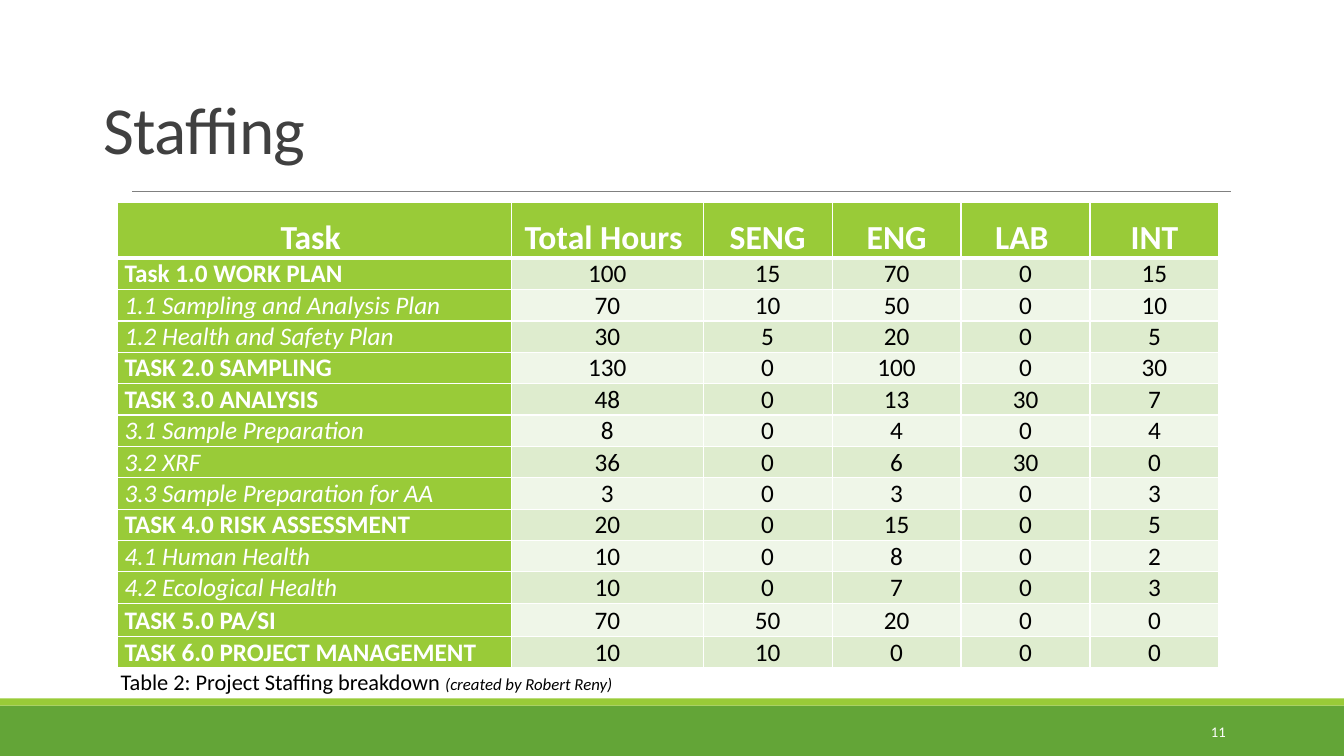
from lxml import etree
from pptx import Presentation
from pptx.dml.color import RGBColor
from pptx.enum.shapes import MSO_CONNECTOR, MSO_SHAPE
from pptx.enum.text import MSO_ANCHOR, PP_ALIGN
from pptx.oxml.ns import qn
from pptx.util import Cm, Pt

TOP, MIDDLE, BOTTOM = MSO_ANCHOR.TOP, MSO_ANCHOR.MIDDLE, MSO_ANCHOR.BOTTOM
LEFT, CENTER, RIGHT = PP_ALIGN.LEFT, PP_ALIGN.CENTER, PP_ALIGN.RIGHT
RECT, STRAIGHT = MSO_SHAPE.RECTANGLE, MSO_CONNECTOR.STRAIGHT

# Content
TITLE = "Staffing"
CAPTION = ("Table 2: Project Staffing breakdown ", "(created by Robert Reny)")
PAGE = "11"
HEAD = ("Task ", "Total Hours ", "SENG", "ENG", "LAB ", "INT")
TASKS = [
    ("Task 1.0 WORK PLAN", 100, 15, 70, 0, 15),
    ("1.1 Sampling and Analysis Plan", 70, 10, 50, 0, 10),
    ("1.2 Health and Safety Plan", 30, 5, 20, 0, 5),
    ("TASK 2.0 SAMPLING", 130, 0, 100, 0, 30),
    ("TASK 3.0 ANALYSIS", 48, 0, 13, 30, 7),
    ("3.1 Sample Preparation", 8, 0, 4, 0, 4),
    ("3.2 XRF", 36, 0, 6, 30, 0),
    ("3.3 Sample Preparation for AA", 3, 0, 3, 0, 3),
    ("TASK 4.0 RISK ASSESSMENT", 20, 0, 15, 0, 5),
    ("4.1 Human Health", 10, 0, 8, 0, 2),
    ("4.2 Ecological Health", 10, 0, 7, 0, 3),
    ("TASK 5.0 PA/SI", 70, 50, 20, 0, 0),
    ("TASK 6.0 PROJECT MANAGEMENT", 10, 10, 0, 0, 0),
]

THEME = {
    "font": "Calibri",
    "dark": "63A537", "green": "99CB38", "rule": "808080",
    "bands": ("DEECCE", "EFF6E8"),
    "title": "404040", "ink": "000000", "white": "FFFFFF",
    "size": {"title": 48, "head": 24, "body": 18, "note": 16, "small": 12, "page": 10.5},
}
SIZE = THEME["size"]

# Layout in cm
WIDE, HIGH = 33.87, 19.05
BARS = [(17.78, 1.27, "dark"), (17.6, 0.18, "green")]
COLS = [9.93, 4.83] + [3.25] * 4
ROWS = [1.4] + [0.79] * 11 + [0.84, 0.79]


def color(name):
    return RGBColor.from_string(THEME.get(name, name))


def write(para, text, size, ink, **style):
    run = para.add_run()
    run.text = text
    format = {"name": THEME["font"], "size": Pt(SIZE[size]), "bold": False, "italic": False}
    for key, value in (format | style).items():
        setattr(run.font, key, value)
    run.font.color.rgb = color(ink)
    return run


def add_text(slide, box, anchor=TOP, align=LEFT):
    frame = slide.shapes.add_textbox(*map(Cm, box)).text_frame
    frame.word_wrap = True
    frame.vertical_anchor = anchor
    para = frame.paragraphs[0]
    para.alignment = align
    return para


def set_edge(cell, side, width):
    props = cell._tc.get_or_add_tcPr()
    line = etree.SubElement(props, qn("a:ln" + side), w=str(Pt(width)))
    fill = etree.SubElement(line, qn("a:solidFill"))
    etree.SubElement(fill, qn("a:srgbClr"), val=THEME["white"])


def fill_cell(cell, row, col, value):
    head, name = row == 0, col == 0
    format = {"margin_left": Cm(0.18), "margin_right": Cm(0.18),
              "margin_top": 0, "margin_bottom": 0, "vertical_anchor": BOTTOM}
    for key, item in format.items():
        setattr(cell, key, item)
    edges = {"L": 1, "R": 1, "T": 3 if row == 1 else 1, "B": 3 if head else 1}
    for side, width in edges.items():
        set_edge(cell, side, width)
    cell.fill.solid()
    cell.fill.fore_color.rgb = color("green" if head or name else THEME["bands"][(row - 1) % 2])
    para = cell.text_frame.paragraphs[0]
    para.alignment = LEFT if name and not head else CENTER
    main = ".0 " in str(value)
    write(para, str(value), "head" if head else "body",
          "white" if head or name else "ink",
          bold=head or main, italic=name and not head and not main)


def main():
    deck = Presentation()
    deck.slide_width, deck.slide_height = Cm(WIDE), Cm(HIGH)
    slide = deck.slides.add_slide(deck.slide_layouts[6])

    # Footer bars
    for top, height, shade in BARS:
        bar = slide.shapes.add_shape(RECT, 0, Cm(top), Cm(WIDE), Cm(height))
        bar.shadow.inherit = False
        bar.fill.solid()
        bar.fill.fore_color.rgb = color(shade)
        bar.line.fill.background()

    # Rule under the title
    rule = slide.shapes.add_connector(STRAIGHT, Cm(3.33), Cm(4.82), Cm(31.01), Cm(4.82))
    rule.line.color.rgb = color("rule")
    rule.line.width = Pt(0.5)
    etree.SubElement(rule._element.spPr, qn("a:effectLst"))

    # Title, caption and page number
    para = add_text(slide, (2.36, 0.86, 28.78, 3.5), BOTTOM)
    para.line_spacing = 0.85
    run = write(para, TITLE, "title", "title")
    run.font._element.set("spc", "-50")

    para = add_text(slide, (2.79, 16.71, 17.88, 0.94))
    write(para, CAPTION[0], "note", "ink")
    write(para, CAPTION[1], "small", "ink", italic=True)

    para = add_text(slide, (27.51, 17.93, 3.63, 1.02), MIDDLE, RIGHT)
    write(para, PAGE, "page", "white")

    # Staffing table
    box = map(Cm, (2.96, 5.11, sum(COLS), sum(ROWS)))
    table = slide.shapes.add_table(len(ROWS), len(COLS), *box).table
    table.horz_banding = False
    for col, width in zip(table.columns, COLS):
        col.width = Cm(width)
    for row, height in zip(table.rows, ROWS):
        row.height = Cm(height)
    for row, values in enumerate([HEAD, *TASKS]):
        for col, value in enumerate(values):
            fill_cell(table.cell(row, col), row, col, value)

    deck.save("out.pptx")


if __name__ == "__main__":
    main()
